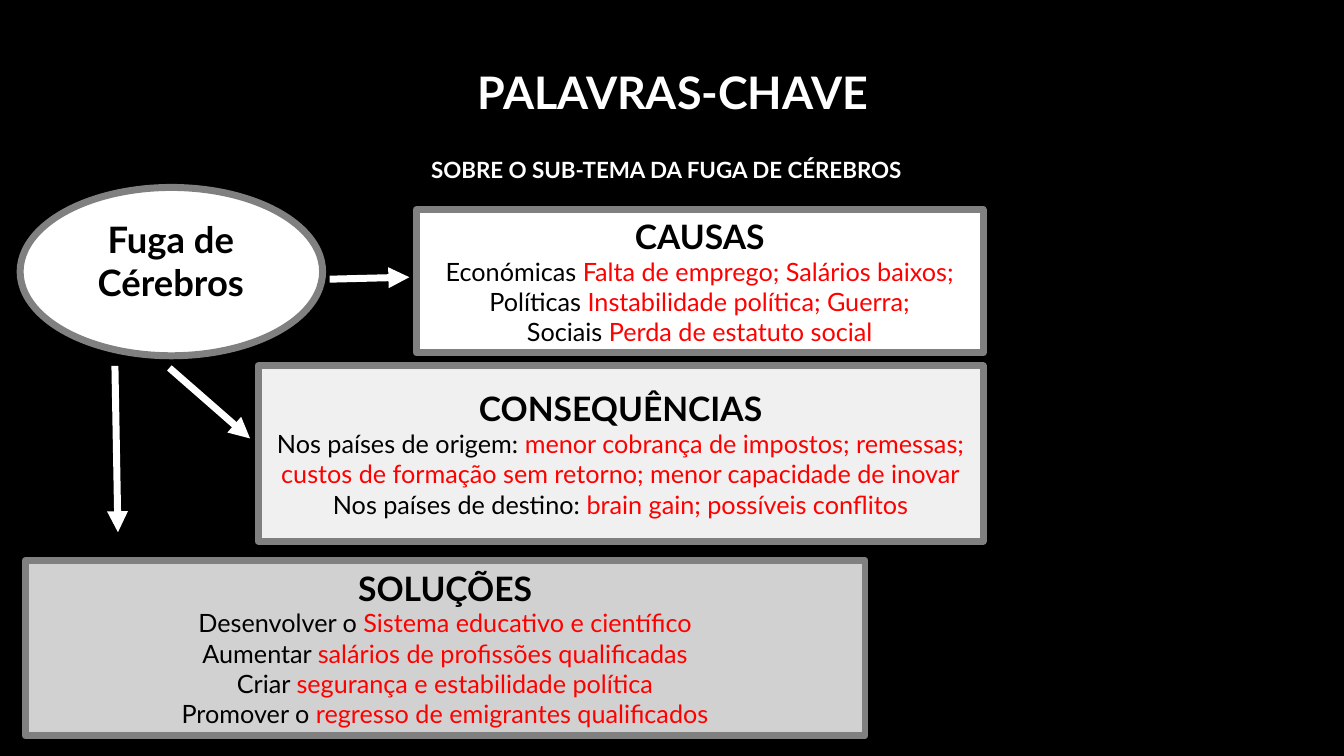
import pptx
import pptx.util
import pptx.dml.color
import pptx.enum.shapes
import pptx.enum.text
import pptx.oxml
import pptx.oxml.ns

Inches = pptx.util.Inches
Pt = pptx.util.Pt
RGBColor = pptx.dml.color.RGBColor
ANCHOR = pptx.enum.text.MSO_ANCHOR
SHAPE = pptx.enum.shapes.MSO_SHAPE

BLACK = RGBColor(0x00, 0x00, 0x00)
WHITE = RGBColor(0xFF, 0xFF, 0xFF)
RED = RGBColor(0xFF, 0x00, 0x00)
BORDER = RGBColor(0x80, 0x80, 0x80)
LIGHT_GREY = RGBColor(0xF0, 0xF0, 0xF0)
MID_GREY = RGBColor(0xD1, 0xD1, 0xD1)
FONT = "Lato"
LINE_WIDTH = Pt(5)

# Each topic: box, fill, heading, lines of (black lead, red detail), arrow ends
TOPICS = [
    ((4.13, 2.08, 5.62, 1.42), WHITE, "CAUSAS", [
        ("Económicas ", "Falta de emprego; Salários baixos;"),
        ("Políticas ", "Instabilidade política; Guerra;"),
        ("Sociais", " Perda de estatuto social"),
    ], ((3.27, 2.77), (4.06, 2.75))),
    ((2.56, 3.63, 7.19, 1.74), LIGHT_GREY, "CONSEQUÊNCIAS", [
        ("Nos países de origem: ", "menor cobrança de impostos; remessas;"),
        ("", "custos de formação sem retorno; menor capacidade de inovar"),
        ("Nos países de destino: ", "brain gain; possíveis conflitos"),
    ], ((1.68, 3.65), (2.48, 4.35))),
    ((0.25, 5.56, 8.33, 1.74), MID_GREY, "SOLUÇÕES", [
        ("Desenvolver o ", "Sistema educativo e científico"),
        ("Aumentar ", "salários de profissões qualificadas"),
        ("Criar ", "segurança e estabilidade política"),
        ("Promover o ", "regresso de emigrantes qualificados"),
    ], ((1.14, 3.63), (1.17, 5.28))),
]


def add_run(paragraph, text, size, color, bold=False):
    run = paragraph.add_run()
    run.text = text
    run.font.name = FONT
    run.font.size = Pt(size)
    run.font.bold = bold
    run.font.color.rgb = color


def add_label(slide, box, text, size, color, anchor=ANCHOR.TOP):
    label = slide.shapes.add_textbox(*map(Inches, box))
    frame = label.text_frame
    frame.word_wrap = True
    frame.vertical_anchor = anchor
    paragraph = frame.paragraphs[0]
    paragraph.alignment = pptx.enum.text.PP_ALIGN.CENTER
    add_run(paragraph, text, size, color, bold=True)
    return paragraph


def add_panel(slide, preset, box, fill):
    panel = slide.shapes.add_shape(preset, *map(Inches, box))
    panel.shadow.inherit = False
    panel.fill.solid()
    panel.fill.fore_color.rgb = fill
    panel.line.color.rgb = BORDER
    panel.line.width = LINE_WIDTH
    return panel


def add_arrow(slide, start, end):
    arrow = slide.shapes.add_connector(
        pptx.enum.shapes.MSO_CONNECTOR.STRAIGHT, *map(Inches, start + end))
    arrow.line.color.rgb = WHITE
    arrow.line.width = LINE_WIDTH
    qn = pptx.oxml.ns.qn
    head = arrow.line._get_or_add_ln().makeelement(qn("a:tailEnd"), {"type": "triangle"})
    arrow.line._get_or_add_ln().append(head)
    properties = arrow._element.spPr
    properties.append(properties.makeelement(qn("a:effectLst"), {}))


def add_headings(slide, box):
    left, top, width, height = box
    title = add_label(slide, (left, top, width, 1.23), "PALAVRAS-CHAVE",
                      32, WHITE, ANCHOR.BOTTOM)
    title.line_spacing = 0.9
    add_label(slide, (left, top + height - 0.37, width - 0.13, 0.37),
              "SOBRE O SUB-TEMA DA FUGA DE CÉREBROS", 16, WHITE)


def add_theme(slide, box):
    left, top, width, _ = box
    add_panel(slide, SHAPE.OVAL, box, WHITE)
    add_label(slide, (left + 0.07, top + 0.24, width - 0.15, 0.98),
              "Fuga de Cérebros", 26, BLACK)


def add_topic(slide, box, fill, heading, lines, arrow_ends):
    frame = add_panel(slide, SHAPE.RECTANGLE, box, fill).text_frame
    frame.word_wrap = False
    frame.vertical_anchor = ANCHOR.MIDDLE
    add_run(frame.paragraphs[0], heading, 24, BLACK, bold=True)
    for lead, detail in lines:
        paragraph = frame.add_paragraph()
        if lead:
            add_run(paragraph, lead, 18, BLACK)
        add_run(paragraph, detail, 18, RED)
    for paragraph in frame.paragraphs:
        paragraph.alignment = pptx.enum.text.PP_ALIGN.CENTER
    add_arrow(slide, *arrow_ends)


def main():
    deck = pptx.Presentation()
    deck.slide_width = Inches(13.33)
    deck.slide_height = Inches(7.5)
    slide = deck.slides.add_slide(deck.slide_layouts[6])
    slide.background.fill.solid()
    slide.background.fill.fore_color.rgb = BLACK

    add_headings(slide, (0.02, 0, 13.31, 1.87))
    add_theme(slide, (0.2, 1.86, 3, 1.67))
    for topic in TOPICS:
        add_topic(slide, *topic)

    deck.save("out.pptx")


if __name__ == "__main__":
    main()
